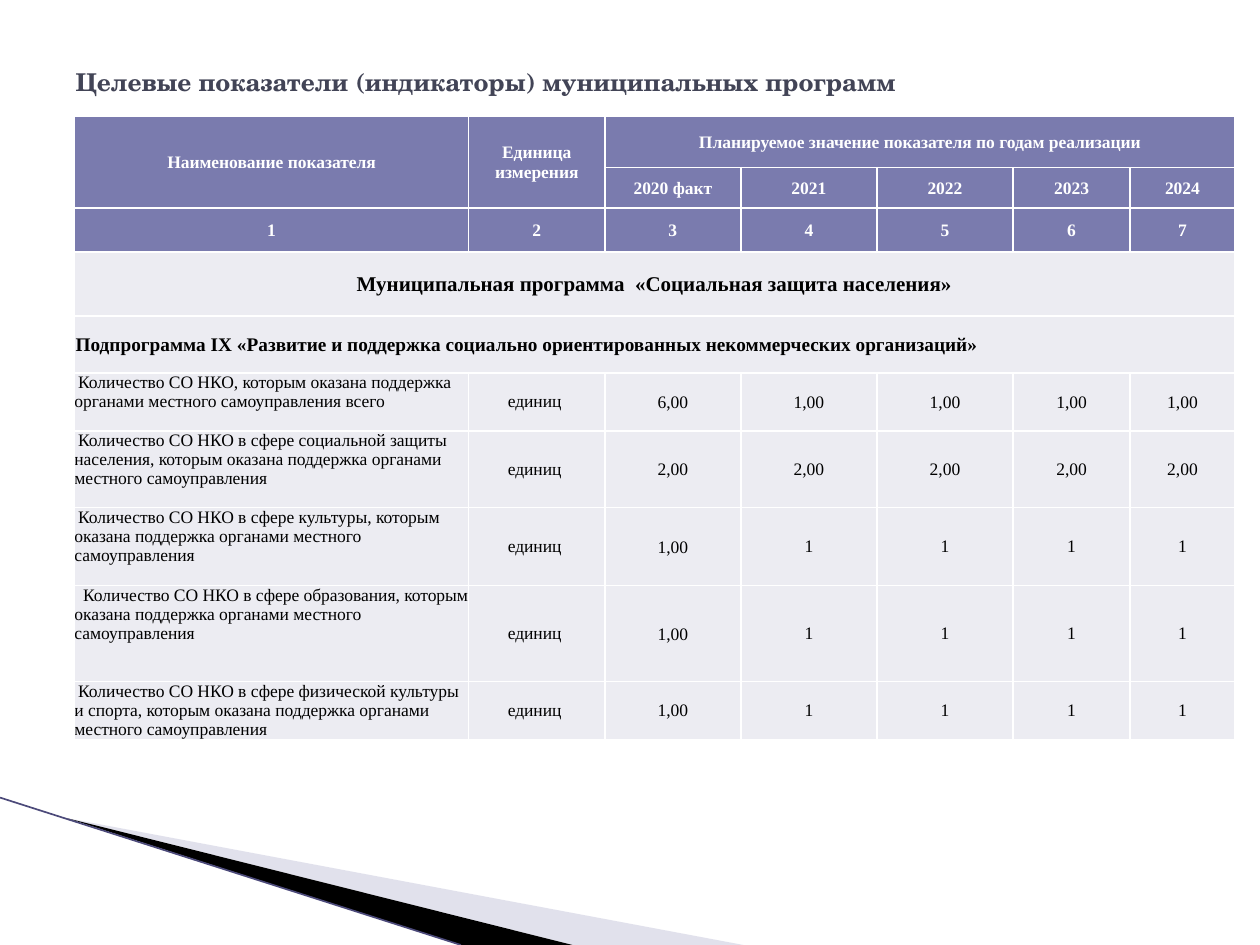
from pptx import Presentation
from pptx.dml.color import RGBColor
from pptx.enum.shapes import MSO_CONNECTOR
from pptx.enum.text import MSO_ANCHOR, MSO_AUTO_SIZE, PP_ALIGN
from pptx.oxml.ns import qn
from pptx.util import Inches, Pt
from lxml import etree

LEFT, CENTER = PP_ALIGN.LEFT, PP_ALIGN.CENTER
TOP, MIDDLE = MSO_ANCHOR.TOP, MSO_ANCHOR.MIDDLE
STRAIGHT = MSO_CONNECTOR.STRAIGHT
NO_AUTOFIT = MSO_AUTO_SIZE.NONE

WIDTH, HEIGHT = 10, 7.5
COLORS = {
    "title": "424456", "header": "7A7BAE", "body": "ECECF2", "white": "FFFFFF",
    "black": "000000", "wedge": "B6B6D1", "line": "4C4A7A",
}
TITLE_FONT, TABLE_FONT = "TeX Gyre Schola", "Times New Roman"

COLUMNS = [3.13] + [1.08] * 4 + [0.93, 0.83]
ROWS = [0.41, 0.32, 0.35, 0.51, 0.45, 0.46, 0.61, 0.62, 0.76, 0.46]
YEARS = ["2020 факт", "2021", "2022", "2023", "2024"]
UNIT = "единиц "
# Name, first-line indent, values by year
INDICATORS = [
    ("Количество СО НКО, которым оказана поддержка органами местного "
     "самоуправления всего", 0.03, ["6,00"] + ["1,00"] * 4),
    ("Количество СО НКО в сфере социальной защиты населения, которым оказана "
     "поддержка органами местного самоуправления", 0.03, ["2,00"] * 5),
    ("Количество СО НКО в сфере культуры, которым оказана поддержка органами "
     "местного самоуправления", 0.03, ["1,00"] + ["1"] * 4),
    ("Количество СО НКО в сфере образования, которым оказана поддержка органами "
     "местного самоуправления", 0.07, ["1,00"] + ["1"] * 4),
    ("Количество СО НКО в сфере физической культуры и спорта, которым оказана "
     "поддержка органами местного самоуправления", 0.03, ["1,00"] + ["1"] * 4),
]


def color(name):
    return RGBColor.from_string(COLORS[name])


def write_text(frame, text, font=TABLE_FONT, size=10, fill="black", bold=False,
               align=LEFT, indent=0):
    paragraph = frame.paragraphs[0]
    paragraph.alignment = align
    if indent:
        paragraph_properties = paragraph._p.get_or_add_pPr()
        paragraph_properties.set("marL", "0")
        paragraph_properties.set("indent", str(Inches(indent)))
    run = paragraph.add_run()
    run.text = text
    run.font.name = font
    run.font.size = Pt(size)
    run.font.bold = bold
    run.font.color.rgb = color(fill)


def set_borders(cell, name="white", width=1):
    properties = cell._tc.get_or_add_tcPr()
    for position, side in enumerate(("lnL", "lnR", "lnT", "lnB")):
        border = etree.Element(qn(f"a:{side}"), w=str(Pt(width)))
        solid = etree.SubElement(border, qn("a:solidFill"))
        etree.SubElement(solid, qn("a:srgbClr"), val=COLORS[name])
        properties.insert(position, border)


def fill_cell(cell, text, inset=0.01, anchor=MIDDLE, **text_format):
    cell.margin_left = cell.margin_right = cell.margin_top = Inches(inset)
    cell.margin_bottom = 0
    cell.vertical_anchor = anchor
    write_text(cell.text_frame, text, **text_format)


def add_title(slide, text, left, top, width, height):
    title = slide.shapes.title
    title.left, title.top = Inches(left), Inches(top)
    title.width, title.height = Inches(width), Inches(height)
    frame = title.text_frame
    frame.word_wrap = True
    frame.auto_size = NO_AUTOFIT
    frame.vertical_anchor = MIDDLE
    write_text(frame, text, font=TITLE_FONT, size=14, fill="title", bold=True)


def add_wedge(slide, points, fill, opacity=100):
    builder = slide.shapes.build_freeform(*points[0])
    builder.add_line_segments(points[1:], close=True)
    shape = builder.convert_to_shape()
    shape.shadow.inherit = False
    shape.line.fill.background()
    shape.fill.solid()
    shape.fill.fore_color.rgb = color(fill)
    if opacity < 100:
        color_element = shape._element.spPr.find(f".//{qn('a:srgbClr')}")
        etree.SubElement(color_element, qn("a:alpha"), val=str(opacity * 1000))


def add_corner(slide, left, top, width, height):
    """Wedges and line that run from the left edge to the foot of the box."""
    def place(across, down):
        return Inches(left + across * width), Inches(top + down * height)

    # Pale and black wedges
    tip = place(0.09, 0.14)
    pale_foot, middle_foot, black_foot = [place(share, 1) for share in (1, 0.77, 0.62)]
    add_wedge(slide, [tip, pale_foot, middle_foot], "wedge", opacity=40)
    add_wedge(slide, [tip, middle_foot, black_foot], "black")

    # Edge line
    line = slide.shapes.add_connector(STRAIGHT, *place(0, 0), *black_foot)
    line.line.color.rgb = color("line")
    line.line.width = Pt(0.95)
    etree.SubElement(line._element.spPr, qn("a:effectLst"))


def add_indicator_table(slide, left, top):
    frame = slide.shapes.add_table(len(ROWS), len(COLUMNS), Inches(left), Inches(top),
                                   Inches(sum(COLUMNS)), Inches(sum(ROWS)))
    table = frame.table
    for column, width in zip(table.columns, COLUMNS):
        column.width = Inches(width)
    for row, height in zip(table.rows, ROWS):
        row.height = Inches(height)

    # Fills and borders
    for index, row in enumerate(table.rows):
        for cell in row.cells:
            cell.fill.solid()
            cell.fill.fore_color.rgb = color("header" if index < 3 else "body")
            set_borders(cell)

    # Merged cells: first row and column, last row and column
    for first_row, first, last_row, last in [
            (0, 0, 1, 0), (0, 1, 1, 1), (0, 2, 0, 6), (3, 0, 3, 6), (4, 0, 4, 6)]:
        table.cell(first_row, first).merge(table.cell(last_row, last))

    # Header rows
    header = [
        (0, 0, ["Наименование показателя", "Единица измерения",
                "Планируемое значение показателя по годам реализации"]),
        (1, 2, YEARS),
        (2, 0, [str(number + 1) for number in range(len(COLUMNS))]),
    ]
    for row, first, texts in header:
        for column, text in enumerate(texts, first):
            fill_cell(table.cell(row, column), text, fill="white", bold=True, align=CENTER)

    # Programme headings
    fill_cell(table.cell(3, 0), "Муниципальная программа  «Социальная защита населения»",
              size=12, bold=True, align=CENTER)
    fill_cell(table.cell(4, 0), "Подпрограмма IX «Развитие и поддержка социально "
              "ориентированных некоммерческих организаций»", size=11, bold=True)

    # Indicators
    for row, (name, indent, values) in enumerate(INDICATORS, 5):
        fill_cell(table.cell(row, 0), name, inset=0, anchor=TOP, indent=indent)
        fill_cell(table.cell(row, 1), UNIT, inset=0, align=CENTER)
        for column, value in enumerate(values, 2):
            inset = 0 if value == "1" else 0.01
            fill_cell(table.cell(row, column), value, inset=inset, align=CENTER)


def main():
    presentation = Presentation()
    presentation.slide_width, presentation.slide_height = Inches(WIDTH), Inches(HEIGHT)
    slide = presentation.slides.add_slide(presentation.slide_layouts[5])
    add_corner(slide, 0, 0.844 * HEIGHT, 0.59 * WIDTH, 0.156 * HEIGHT)
    add_title(slide, "Целевые показатели (индикаторы) муниципальных программ",
              0.05 * WIDTH, 0.04 * HEIGHT, 0.9 * WIDTH, 0.092 * HEIGHT)
    add_indicator_table(slide, 0.059 * WIDTH, 0.1227 * HEIGHT)
    presentation.save("out.pptx")


if __name__ == "__main__":
    main()
